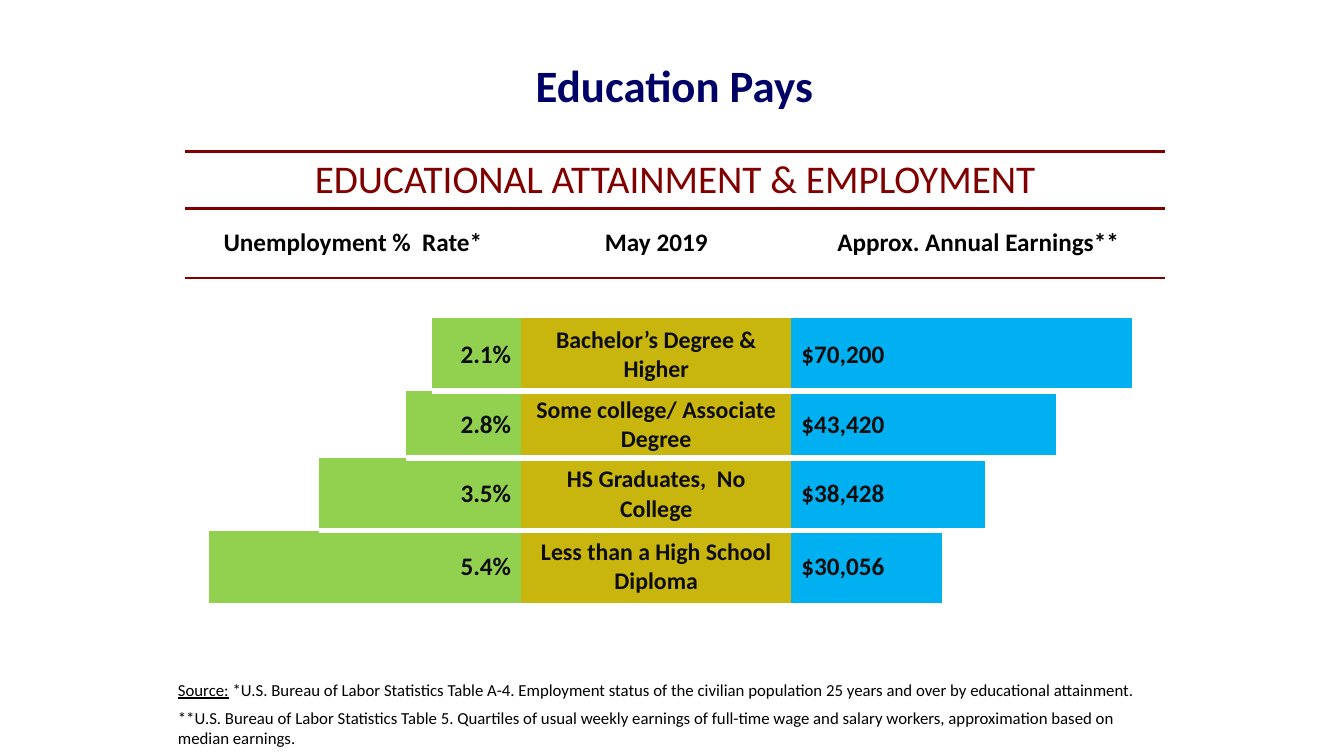
"""Builds the slide on unemployment and earnings by educational attainment."""
from dataclasses import dataclass

from lxml import etree
from pptx import Presentation
from pptx.dml.color import RGBColor
from pptx.enum.text import MSO_ANCHOR, MSO_AUTO_SIZE, PP_ALIGN
from pptx.oxml.ns import qn
from pptx.util import Pt

LEFT, CENTER, RIGHT = PP_ALIGN.LEFT, PP_ALIGN.CENTER, PP_ALIGN.RIGHT
MIDDLE = MSO_ANCHOR.MIDDLE
FIXED = MSO_AUTO_SIZE.NONE
TITLE_ONLY = 5
PLAIN_TABLE = "{2D5ABB26-0587-4C30-8999-92F81FD0307C}"

COLUMNS = [17.5, 31, 47.6, 27, 18, 16.5, 18, 64, 193,
           29.5, 40.5, 37.7, 31, 33.5, 9.3, 54, 23.7]
ROWS = [39.6, 49.7, 28.1, 51.8, 47.5, 51.8, 51.8]
LEVEL_COLUMN = 8
LAST_COLUMN = len(COLUMNS) - 1
FIRST_BAR_ROW = 3
HEADINGS = [
    ("Unemployment %  Rate*", 0, LEVEL_COLUMN - 1),
    ("May 2019", LEVEL_COLUMN, LEVEL_COLUMN),
    ("Approx. Annual Earnings**", LEVEL_COLUMN + 1, LAST_COLUMN),
]
BARS = [
    ("2.1%", 7, "Bachelor’s Degree & Higher", "$70,200", 15),
    ("2.8%", 6, "Some college/ Associate Degree", "$43,420", 14),
    ("3.5%", 3, "HS Graduates,  No College", "$38,428", 12),
    ("5.4%", 1, "Less than a High School Diploma", "$30,056", 11),
]
NOTES = [
    [("Source:", True),
     (" *U.S. Bureau of Labor Statistics Table A-4. Employment status of the "
      "civilian population 25 years and over by educational attainment.", False)],
    [("**U.S. Bureau of Labor Statistics Table 5. Quartiles of usual weekly "
      "earnings of full-time wage and salary workers, approximation based on "
      "median earnings.", False)],
]


@dataclass(frozen=True)
class Theme:
    """Colours and type sizes of the slide."""
    font: str = "Calibri"
    navy: str = "000066"
    maroon: str = "800000"
    black: str = "000000"
    ink: str = "0D0D0D"
    white: str = "FFFFFF"
    green: str = "92D050"
    gold: str = "C8B60E"
    blue: str = "00B0F0"
    title: float = 32
    banner: float = 28
    body: float = 18
    level: float = 17
    note: float = 12
    rule: float = 2.25
    gap: float = 4.5


class SlideBuilder:
    """Adds styled elements to the current slide."""

    def __init__(self, deck, theme):
        """Open a title-only slide."""
        self.theme = theme
        self.page = deck.slides.add_slide(deck.slide_layouts[TITLE_ONLY])

    def style(self, font, size, color, **extras):
        """Apply the theme font and the given format values."""
        values = {"name": self.theme.font, "size": Pt(size), **extras}
        for name, value in values.items():
            setattr(font, name, value)
        font.color.rgb = RGBColor.from_string(color)

    def place(self, box, left, top, width, height):
        """Position a shape."""
        for name, value in zip(("left", "top", "width", "height"),
                               (left, top, width, height)):
            setattr(box, name, Pt(value))

    def title(self, text, *frame):
        """Fill and format the title placeholder."""
        box = self.page.shapes.title
        self.place(box, *frame)
        box.text_frame.auto_size = FIXED
        box.text_frame.vertical_anchor = MIDDLE
        para = box.text_frame.paragraphs[0]
        para.alignment = CENTER
        span = para.add_run()
        span.text = text
        self.style(span.font, self.theme.title, self.theme.navy, bold=True)

    def notes(self, paragraphs, *frame):
        """Add the source notes."""
        box = self.page.shapes.add_textbox(*map(Pt, frame))
        box.text_frame.word_wrap = True
        for index, spans in enumerate(paragraphs):
            para = box.text_frame.paragraphs[0]
            if index:
                para = box.text_frame.add_paragraph()
                para.space_before = Pt(self.theme.note / 2)
            for text, underline in spans:
                span = para.add_run()
                span.text = text
                self.style(span.font, self.theme.note, self.theme.black,
                           underline=underline)

    def table(self, columns, rows, *frame):
        """Add an unstyled table with the given column and row sizes."""
        table = self.page.shapes.add_table(
            len(rows), len(columns), *map(Pt, frame)).table
        table.first_row = table.horz_banding = False
        table._tbl.tblPr.find(qn("a:tableStyleId")).text = PLAIN_TABLE
        for column, width in zip(table.columns, columns):
            column.width = Pt(width)
        for row, height in zip(table.rows, rows):
            row.height = Pt(height)
        for cell in table.iter_cells():
            cell.fill.background()
        return table

    def border(self, cell, sides, color, width):
        """Draw the listed sides of a cell, bottom before top."""
        properties = cell._tc.get_or_add_tcPr()
        for side in sides:
            line = etree.Element(qn(f"a:ln{side}"), w=str(Pt(width)))
            fill = etree.SubElement(line, qn("a:solidFill"))
            etree.SubElement(fill, qn("a:srgbClr"), val=color)
            properties.insert(0, line)

    def cell(self, table, row, first, last, text="", align=LEFT, size=None,
             color=None, fill=None, bold=True, sides="", line=None):
        """Merge a run of cells and format it as one."""
        cell = table.cell(row, first)
        if last > first:
            cell.merge(table.cell(row, last))
        for column in range(first, last + 1):
            part = table.cell(row, column)
            if fill:
                part.fill.solid()
                part.fill.fore_color.rgb = RGBColor.from_string(fill)
            if line:
                self.border(part, sides, *line)
        if text:
            cell.vertical_anchor = MIDDLE
            para = cell.text_frame.paragraphs[0]
            para.alignment = align
            span = para.add_run()
            span.text = text
            self.style(span.font, size, color, bold=bold)


def main():
    """Build and save the slide."""
    deck = Presentation()
    deck.slide_width, deck.slide_height = Pt(960), Pt(540)
    theme = Theme()
    builder = SlideBuilder(deck, theme)
    builder.title("Education Pays", 216, 38, 531.5, 45.5)
    builder.notes(NOTES, 120, 481.7, 720, 58.3)

    table = builder.table(COLUMNS, ROWS, 132, 108, sum(COLUMNS), sum(ROWS))
    rule = (theme.maroon, theme.rule)
    builder.cell(table, 0, 0, LAST_COLUMN, "EDUCATIONAL ATTAINMENT & EMPLOYMENT",
                 CENTER, theme.banner, theme.maroon, bold=False,
                 sides="BT", line=rule)
    for text, first, last in HEADINGS:
        builder.cell(table, 1, first, last, text, CENTER, theme.body,
                     theme.black, sides="T", line=rule)

    gap = (theme.white, theme.gap)
    for index, (rate, start, level, earnings, end) in enumerate(BARS):
        row = FIRST_BAR_ROW + index
        below = "B" if index < len(BARS) - 1 else ""
        both = below + ("T" if index else "")
        builder.cell(table, row, 0, start - 1)
        builder.cell(table, row, start, LEVEL_COLUMN - 1, rate, RIGHT,
                     theme.body, theme.ink, theme.green, sides=below, line=gap)
        builder.cell(table, row, LEVEL_COLUMN, LEVEL_COLUMN, level, CENTER,
                     theme.level, theme.ink, theme.gold, sides=both, line=gap)
        builder.cell(table, row, LEVEL_COLUMN + 1, end, earnings, LEFT,
                     theme.body, theme.ink, theme.blue, sides=both, line=gap)
        builder.cell(table, row, end + 1, LAST_COLUMN)
    deck.save("out.pptx")


if __name__ == "__main__":
    main()
